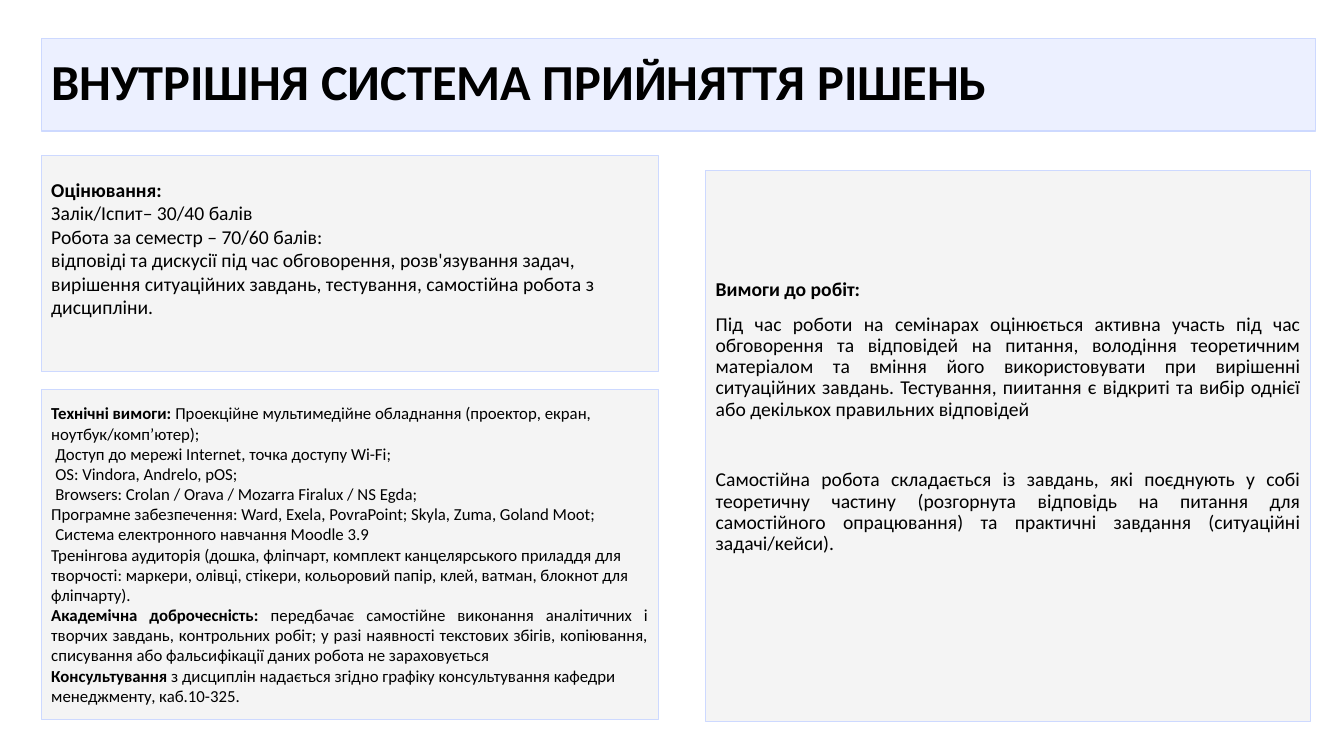
import pptx
import pptx.dml.color
import pptx.enum.shapes
import pptx.enum.text
import pptx.oxml.ns
import pptx.util
from lxml import etree
from pptx.util import Inches

BLACK = pptx.dml.color.RGBColor(0x00, 0x00, 0x00)
PALE_BLUE = pptx.dml.color.RGBColor(0xE5, 0xEB, 0xFF)
PALE_GREY = pptx.dml.color.RGBColor(0xF0, 0xF0, 0xF0)
BORDER_BLUE = pptx.dml.color.RGBColor(0xCD, 0xD9, 0xFF)

LEFT = pptx.enum.text.PP_ALIGN.LEFT
JUSTIFY = pptx.enum.text.PP_ALIGN.JUSTIFY
TOP = pptx.enum.text.MSO_ANCHOR.TOP
MIDDLE = pptx.enum.text.MSO_ANCHOR.MIDDLE

presentation = pptx.Presentation()
presentation.slide_width = Inches(13.33)
presentation.slide_height = Inches(7.5)
slide = presentation.slides.add_slide(presentation.slide_layouts[6])


def add_panel(position, color, opacity, anchor, top_inset):
    shape = slide.shapes.add_shape(
        pptx.enum.shapes.MSO_SHAPE.RECTANGLE, *[Inches(value) for value in position])
    shape.shadow.inherit = False
    shape.fill.solid()
    shape.fill.fore_color.rgb = color
    color_element = shape.fill._xPr.find(".//" + pptx.oxml.ns.qn("a:srgbClr"))
    etree.SubElement(color_element, pptx.oxml.ns.qn("a:alpha"), val=str(opacity * 1000))
    shape.line.color.rgb = BORDER_BLUE
    shape.line.width = pptx.util.Pt(0.75)
    frame = shape.text_frame
    frame.word_wrap = True
    frame.vertical_anchor = anchor
    frame.margin_top = Inches(top_inset)
    return frame


def add_paragraphs(frame, size, line_spacing, rows):
    for index, (bold_text, plain_text, alignment, space_before, indent) in enumerate(rows):
        paragraph = frame.paragraphs[0] if index == 0 else frame.add_paragraph()
        paragraph.alignment = alignment
        paragraph.line_spacing = line_spacing
        paragraph.space_before = pptx.util.Pt(space_before)
        if indent:
            paragraph._p.get_or_add_pPr().set("marL", str(Inches(indent)))
        paragraph.font.name = "Calibri"
        paragraph.font.size = pptx.util.Pt(size)
        paragraph.font.color.rgb = BLACK
        for text, bold in ((bold_text, True), (plain_text, False)):
            if text:
                run = paragraph.add_run()
                run.text = text
                run.font.bold = bold


title = add_panel((0.41, 0.38, 12.64, 0.92), PALE_BLUE, 70, MIDDLE, 0.05)
add_paragraphs(title, 36, 0.9, [("ВНУТРІШНЯ СИСТЕМА ПРИЙНЯТТЯ РІШЕНЬ", "", LEFT, 0, 0)])

grading = add_panel((0.41, 1.54, 6.12, 2.15), PALE_GREY, 69, TOP, 0.22)
add_paragraphs(grading, 14, 1.0, [
    ("Оцінювання:", "", LEFT, 0, 0),
    ("", "Залік/Іспит– 30/40 балів", LEFT, 0, 0),
    ("", "Робота за семестр – 70/60 балів:", LEFT, 0, 0),
    ("", "відповіді та дискусії під час обговорення, розв'язування задач, вирішення "
         "ситуаційних завдань, тестування, самостійна робота з дисципліни.", LEFT, 0, 0),
])

requirements = add_panel((0.41, 3.86, 6.12, 3.28), PALE_GREY, 69, MIDDLE, 0.05)
add_paragraphs(requirements, 12, 1.0, [
    ("Технічні вимоги: ", "Проекційне мультимедійне обладнання (проектор, екран, "
                          "ноутбук/комп’ютер);", LEFT, 0, 0),
    ("", "Доступ до мережі Internet, точка доступу Wi-Fi;", LEFT, 0, 0.04),
    ("", "OS: Vindora, Andrelo, pOS;", LEFT, 0, 0.04),
    ("", "Browsers: Crolan / Orava / Mozarra Firalux / NS Egda;", LEFT, 0, 0.04),
    ("", "Програмне забезпечення: Ward, Exela, PovraPoint; Skyla, Zuma, Goland Moot;",
     LEFT, 0, 0),
    ("", "Система електронного навчання Moodle 3.9", LEFT, 0, 0.04),
    ("", "Тренінгова аудиторія (дошка, фліпчарт, комплект канцелярського приладдя для "
         "творчості: маркери, олівці, стікери, кольоровий папір, клей, ватман, блокнот "
         "для фліпчарту).", LEFT, 0, 0),
    ("Академічна доброчесність:", " передбачає самостійне виконання аналітичних і "
     "творчих завдань, контрольних робіт; у разі наявності текстових збігів, копіювання, "
     "списування або фальсифікації даних робота не зараховується", JUSTIFY, 0, 0),
    ("Консультування", " з дисциплін надається згідно графіку консультування кафедри "
                       "менеджменту, каб.10-325.", LEFT, 0, 0),
])

assignments = add_panel((7, 1.69, 6, 5.47), PALE_GREY, 69, TOP, 1.08)
add_paragraphs(assignments, 14, 0.9, [
    ("Вимоги до робіт:", "", LEFT, 0, 0),
    ("", "Під час роботи на семінарах оцінюється активна участь під час обговорення та "
         "відповідей на питання, володіння теоретичним матеріалом та вміння його "
         "використовувати при вирішенні ситуаційних завдань. Тестування, пиитання є "
         "відкриті та вибір однієї або декількох правильних відповідей", JUSTIFY, 10, 0),
    ("", "Самостійна робота складається із завдань, які поєднують у собі теоретичну "
         "частину (розгорнута відповідь на питання для самостійного опрацювання) та "
         "практичні завдання (ситуаційні задачі/кейси).", JUSTIFY, 35.4, 0),
])

presentation.save("out.pptx")
